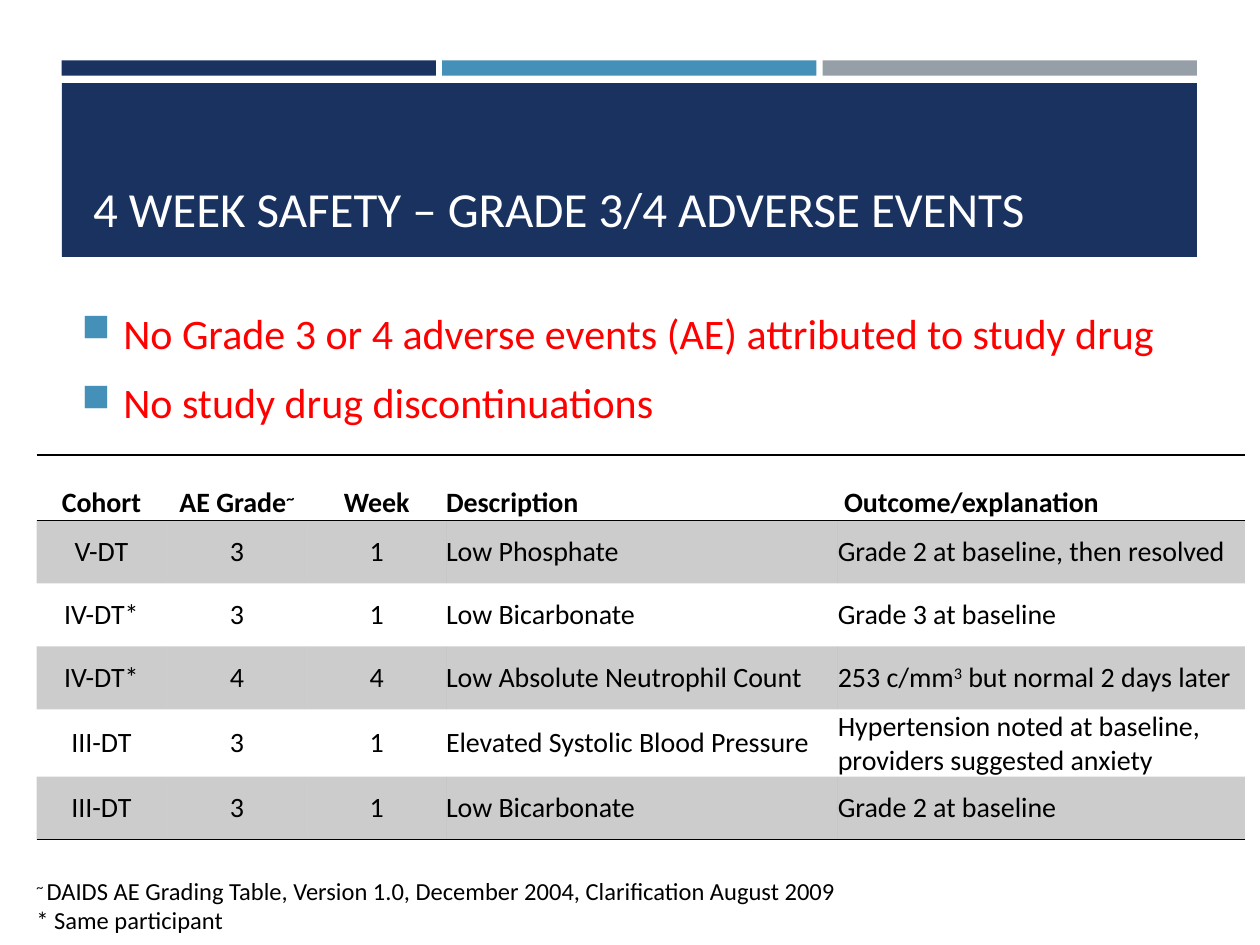
from lxml import etree
from pptx import Presentation
from pptx import util as u
from pptx.dml.color import RGBColor
from pptx.enum import shapes, text
from pptx.oxml import ns

COLORS = {"navy": "1A3260", "blue": "4590B8", "gray": "969FA7",
          "white": "FFFFFF", "red": "FF0000", "black": "000000"}
PLAIN_TABLE = "{2D5ABB26-0587-4C30-8999-92F81FD0307C}"


def rgb(name):
    return RGBColor.from_string(COLORS[name])


def child(parent, tag, **attrs):
    return etree.SubElement(parent, ns.qn(tag), attrs)


class Deck:
    font = "Calibri"

    def __init__(self, width, height):
        self.prs = Presentation()
        self.prs.slide_width, self.prs.slide_height = u.Inches(width), u.Inches(height)
        self.s = self.prs.slides.add_slide(self.prs.slide_layouts[6])

    def set_text(self, p, content, size, color, bold=False):
        for i, part in enumerate(content.split("^")):
            if part:
                r = p.add_run()
                r.text = part
                if i % 2:
                    r._r.get_or_add_rPr().set("baseline", "30000")
        p.font.name, p.font.size, p.font.bold = self.font, u.Pt(size), bold
        p.font.color.rgb = rgb(color)

    def bar(self, box, color):
        sp = self.s.shapes.add_shape(shapes.MSO_SHAPE.RECTANGLE, *map(u.Inches, box))
        sp.shadow.inherit = False
        sp.fill.solid()
        sp.fill.fore_color.rgb = rgb(color)
        sp.line.fill.background()

    def textbox(self, box, lines, size, color, anchor=text.MSO_ANCHOR.TOP, wrap=True, bullet=None):
        tf = self.s.shapes.add_textbox(*map(u.Inches, box)).text_frame
        tf.word_wrap = wrap
        tf.vertical_anchor = anchor
        for i, line in enumerate(lines):
            p = tf.paragraphs[0] if i == 0 else tf.add_paragraph()
            if bullet:
                self.bullet(p, bullet)
                p.space_after = u.Pt(6)
                if i:
                    p.space_before = u.Pt(5)
            self.set_text(p, line, size, color)

    def bullet(self, p, color):
        pPr = p._p.get_or_add_pPr()
        indent = u.Inches(0.33)
        pPr.set("marL", str(indent))
        pPr.set("indent", str(-indent))
        child(child(pPr, "a:buClr"), "a:srgbClr", val=COLORS[color])
        child(pPr, "a:buSzPct", val="92000")
        child(pPr, "a:buChar", char="■")

    def border(self, cell, tag):
        ln = child(cell._tc.get_or_add_tcPr(), tag, w=str(u.Pt(1)))
        child(child(ln, "a:solidFill"), "a:srgbClr", val=COLORS["black"])

    def shade(self, cell, alpha):
        cell.fill.solid()
        cell.fill.fore_color.rgb = rgb("black")
        clr = cell._tc.tcPr.find(ns.qn("a:solidFill")).find(ns.qn("a:srgbClr"))
        child(clr, "a:alpha", val=str(alpha * 1000))

    def table(self, left, top, widths, heights, rows, centered):
        box = map(u.Inches, (left, top, sum(widths), sum(heights)))
        table = self.s.shapes.add_table(len(rows), len(widths), *box).table
        table.first_row = table.horz_banding = False
        table._tbl.tblPr.find(ns.qn("a:tableStyleId")).text = PLAIN_TABLE
        for col, width in zip(table.columns, widths):
            col.width = u.Inches(width)
        for i, (row, height) in enumerate(zip(rows, heights)):
            table.rows[i].height = u.Inches(height)
            header = i == 0
            for j, content in enumerate(row):
                cell = table.cell(i, j)
                cell.margin_left = cell.margin_right = 0
                cell.margin_top = cell.margin_bottom = 0
                cell.vertical_anchor = text.MSO_ANCHOR.BOTTOM if header else text.MSO_ANCHOR.MIDDLE
                if header:
                    self.border(cell, "a:lnT")
                if header or i == len(rows) - 1:
                    self.border(cell, "a:lnB")
                if i % 2:
                    self.shade(cell, 20)
                else:
                    cell.fill.background()
                p = cell.text_frame.paragraphs[0]
                p.alignment = text.PP_ALIGN.CENTER if j < centered else text.PP_ALIGN.LEFT
                self.set_text(p, content, 16, "black", header)
        return table


def main():
    deck = Deck(10, 7.5)
    for i, color in enumerate(("navy", "blue", "gray")):
        deck.bar((0.49 + i * 3.02, 0.48, 2.97, 0.12), color)
    deck.bar((0.49, 0.66, 9.01, 1.38), "navy")
    deck.textbox((0.64, 0.75, 8.74, 1.18), ["4 WEEK SAFETY – GRADE 3/4 ADVERSE EVENTS"],
                 28, "white", anchor=text.MSO_ANCHOR.BOTTOM)
    deck.textbox((0.55, 2.23, 9.08, 1.37),
                 ["No Grade 3 or 4 adverse events (AE) attributed to study drug",
                  "No study drug discontinuations"],
                 24, "red", anchor=text.MSO_ANCHOR.MIDDLE, bullet="blue")
    events = [
        ("Cohort", "AE Grade^~", "Week", "Description", "Outcome/explanation"),
        ("V-DT", "3", "1", "Low Phosphate", "Grade 2 at baseline, then resolved"),
        ("IV-DT*", "3", "1", "Low Bicarbonate", "Grade 3 at baseline"),
        ("IV-DT*", "4", "4", "Low Absolute Neutrophil Count",
         "253 c/mm^3^ but normal 2 days later"),
        ("III-DT", "3", "1", "Elevated Systolic Blood Pressure",
         "Hypertension noted at baseline, providers suggested anxiety"),
        ("III-DT", "3", "1", "Low Bicarbonate", "Grade 2 at baseline"),
    ]
    table = deck.table(0.29, 3.61, (1.03, 1.12, 1.1, 3.11, 3.23),
                       [0.52] + [0.5] * 5, events, centered=3)
    table.cell(0, 4).margin_left = u.Inches(0.05)
    deck.textbox((0.19, 6.9, 6.66, 0.57),
                 ["^~ ^DAIDS AE Grading Table, Version 1.0, December 2004, Clarification August 2009",
                  "* Same participant"], 14, "black", wrap=False)
    deck.prs.save("out.pptx")


if __name__ == "__main__":
    main()
